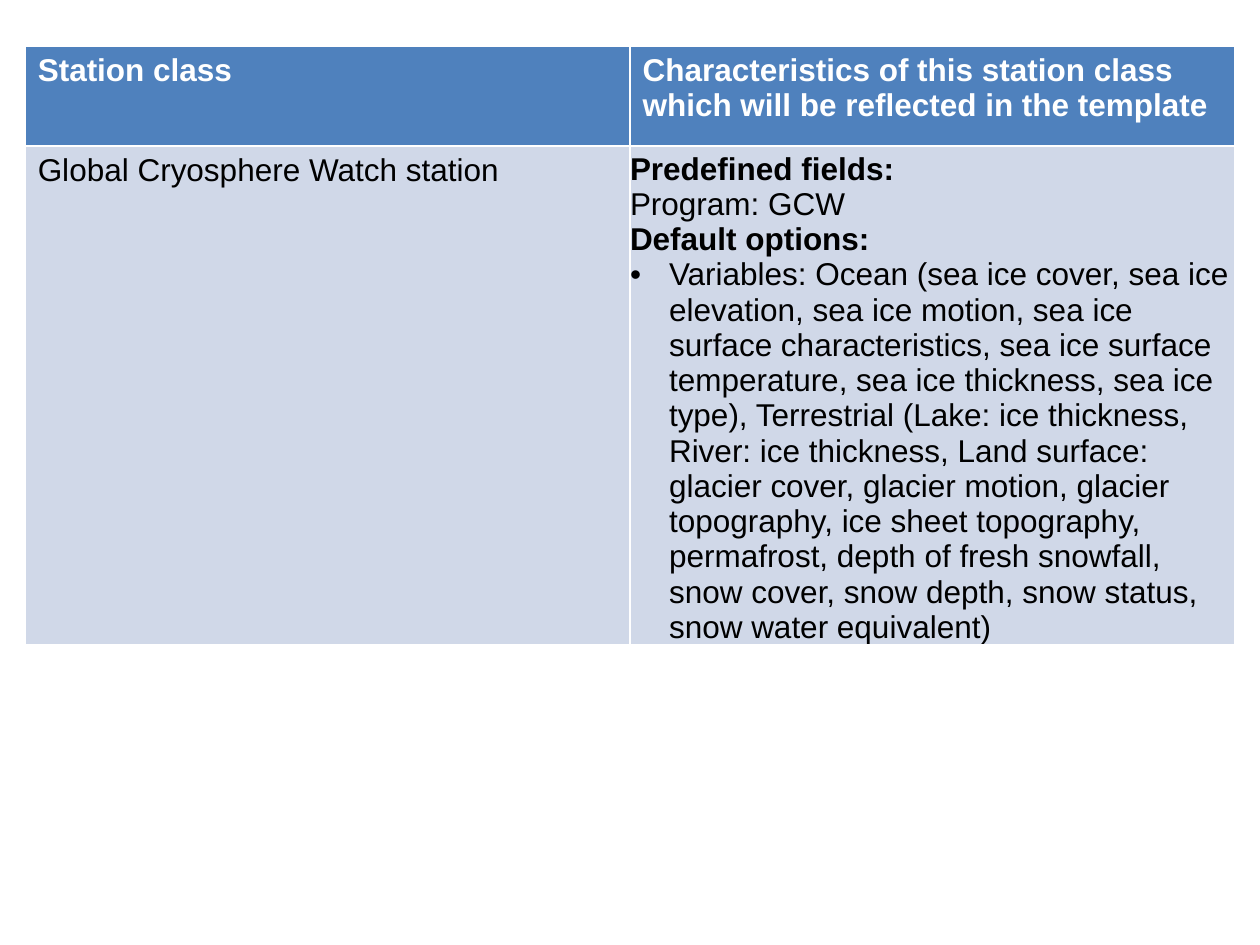
"""Build a slide with a table that describes the Global Cryosphere Watch station class."""
import pptx
import pptx.dml.color
import pptx.enum.text
import pptx.util
import lxml.etree

COLORS = {"header": "4F81BD", "body": "D0D8E8", "white": "FFFFFF", "black": "000000"}
COLUMN_WIDTH = pptx.util.Inches(4.8)
ROW_HEIGHTS = [pptx.util.Inches(0.79), pptx.util.Inches(3.95)]
INDENT = pptx.util.Inches(0.31)


def add_text(cell, text, color="black", bold=False, bullet=False, spacing=None):
    frame = cell.text_frame
    paragraph = frame.add_paragraph() if frame.text else frame.paragraphs[0]
    paragraph.text = text
    if spacing:
        paragraph.line_spacing = spacing
    if bullet:
        properties = paragraph._p.get_or_add_pPr()
        properties.set("marL", str(INDENT))
        properties.set("indent", str(-INDENT))
        namespace = properties.nsmap["a"]
        lxml.etree.SubElement(properties, f"{{{namespace}}}buFont", typeface="Arial")
        lxml.etree.SubElement(properties, f"{{{namespace}}}buChar", char="•")
    font = paragraph.runs[0].font
    font.name = "Arial"
    font.size = pptx.util.Pt(18)
    font.bold = bold
    font.color.rgb = pptx.dml.color.RGBColor.from_string(COLORS[color])


presentation = pptx.Presentation()
presentation.slide_width = pptx.util.Inches(10)
presentation.slide_height = pptx.util.Inches(7.5)
slide = presentation.slides.add_slide(presentation.slide_layouts[6])

table = slide.shapes.add_table(
    2, 2, pptx.util.Inches(0.2), pptx.util.Inches(0.37), 2 * COLUMN_WIDTH, sum(ROW_HEIGHTS)
).table
for column in table.columns:
    column.width = COLUMN_WIDTH
for row, height, fill in zip(table.rows, ROW_HEIGHTS, ["header", "body"]):
    row.height = height
    for cell in row.cells:
        cell.fill.solid()
        cell.fill.fore_color.rgb = pptx.dml.color.RGBColor.from_string(COLORS[fill])

headings = [
    "Station class",
    "Characteristics of this station class which will be reflected in the template",
]
for cell, heading in zip(table.rows[0].cells, headings):
    add_text(cell, heading, color="white", bold=True)

add_text(table.cell(1, 0), "Global Cryosphere Watch station")

details = table.cell(1, 1)
details.margin_left = details.margin_right = details.margin_top = details.margin_bottom = 0
details.vertical_anchor = pptx.enum.text.MSO_ANCHOR.MIDDLE
add_text(details, "Predefined fields:", bold=True, spacing=1.15)
add_text(details, "Program: GCW")
add_text(details, "Default options:", bold=True)
add_text(
    details,
    "Variables: Ocean (sea ice cover, sea ice elevation, sea ice motion, "
    "sea ice surface characteristics, sea ice surface temperature, sea ice thickness, "
    "sea ice type), Terrestrial (Lake: ice thickness, River: ice thickness, "
    "Land surface: glacier cover, glacier motion, glacier topography, "
    "ice sheet topography, permafrost, depth of fresh snowfall, snow cover, "
    "snow depth, snow status, snow water equivalent)",
    bullet=True,
)

presentation.save("out.pptx")
